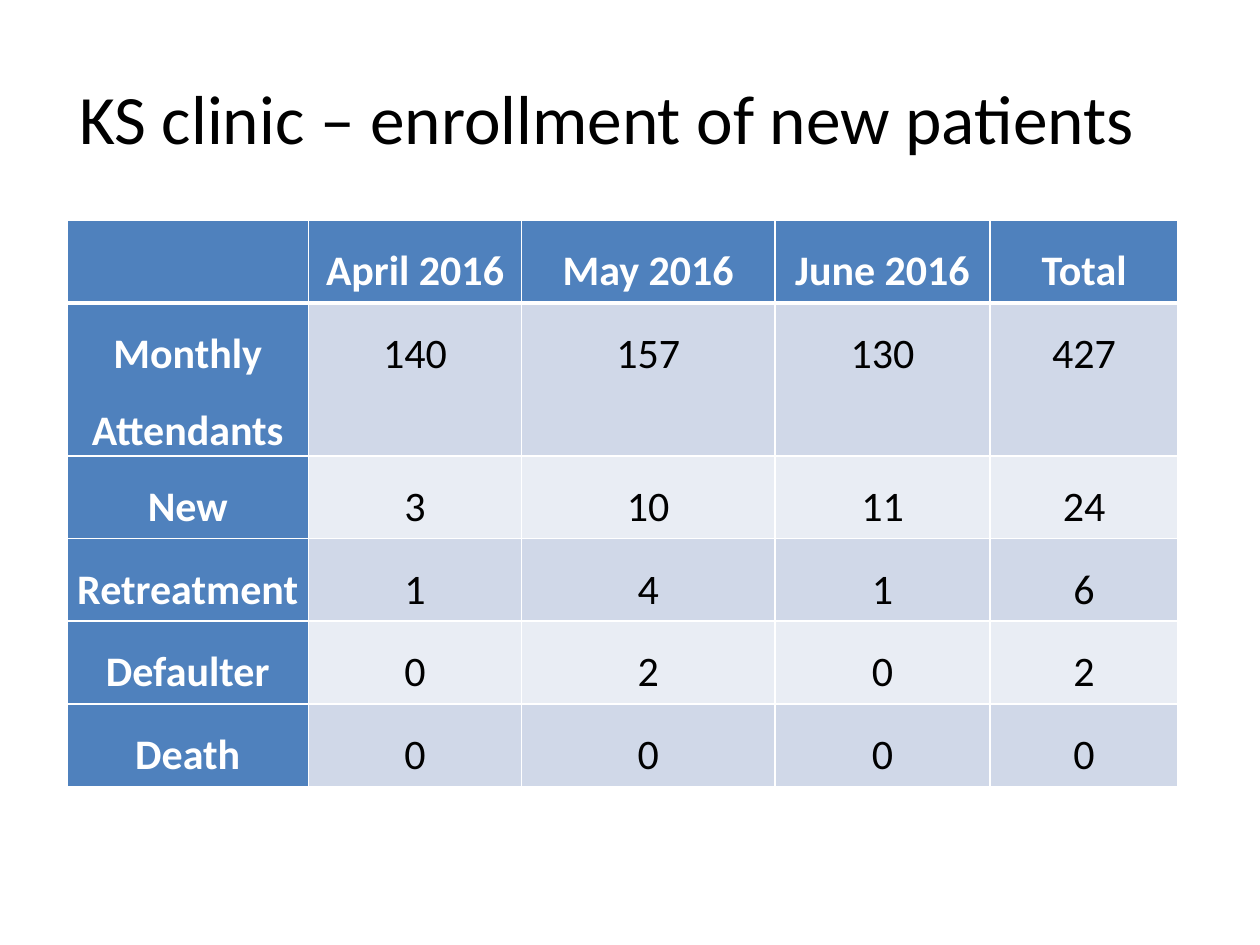
from dataclasses import dataclass

from lxml.etree import SubElement
from pptx import Presentation
from pptx.dml.color import RGBColor
from pptx.enum.text import MSO_ANCHOR, PP_ALIGN
from pptx.oxml.ns import qn
from pptx.util import Pt


@dataclass(frozen=True)
class Theme:
    font: str = "Calibri"
    title_size: float = 39.6
    table_size: float = 24
    text: str = "000000"
    header_text: str = "FFFFFF"
    header_fill: str = "4F81BD"
    bands: tuple = ("D0D8E8", "E9EDF4")
    border: str = "FFFFFF"


theme = Theme()


def style_font(font, size, color, bold=False):
    font.name = theme.font
    font.size = Pt(size)
    font.bold = bold
    font.color.rgb = RGBColor.from_string(color)


def add_borders(cell, bottom_width):
    """Draw all four cell edges; must run before the cell fill is set."""
    properties = cell._tc.get_or_add_tcPr()
    for side, width in (("L", 1), ("R", 1), ("T", 1), ("B", bottom_width)):
        edge = SubElement(properties, qn(f"a:ln{side}"), w=str(Pt(width)))
        fill = SubElement(edge, qn("a:solidFill"))
        SubElement(fill, qn("a:srgbClr"), val=theme.border)


presentation = Presentation()
presentation.slide_width, presentation.slide_height = Pt(720), Pt(540)
slide = presentation.slides.add_slide(presentation.slide_layouts[6])

title = slide.shapes.add_textbox(Pt(38.16), Pt(21.6), Pt(648), Pt(90)).text_frame
title.word_wrap = True
title.vertical_anchor = MSO_ANCHOR.MIDDLE
title.text = "KS clinic – enrollment of new patients"
style_font(title.paragraphs[0].runs[0].font, theme.title_size, theme.text)

enrollment = [
    ("", "April 2016", "May 2016", "June 2016", "Total"),
    ("Monthly Attendants", "140", "157", "130", "427"),
    ("New", "3", "10", "11", "24"),
    ("Retreatment", "1", "4", "1", "6"),
    ("Defaulter", "0", "2", "0", "2"),
    ("Death", "0", "0", "0", "0"),
]
column_widths = [138.24, 121.68, 144.72, 123.12, 107.28]
row_heights = [47.2, 87.4] + [47.2] * 4

table = slide.shapes.add_table(
    len(row_heights), len(column_widths),
    Pt(38.16), Pt(126), Pt(sum(column_widths)), Pt(sum(row_heights)),
).table
table.first_col = True
for column, width in zip(table.columns, column_widths):
    column.width = Pt(width)
for row, height in zip(table.rows, row_heights):
    row.height = Pt(height)

for r, values in enumerate(enrollment):
    for c, value in enumerate(values):
        cell = table.cell(r, c)
        is_header = r == 0 or c == 0
        add_borders(cell, bottom_width=3 if r == 0 else 1)
        cell.fill.solid()
        cell.fill.fore_color.rgb = RGBColor.from_string(
            theme.header_fill if is_header else theme.bands[(r - 1) % 2])
        cell.margin_left = cell.margin_right = Pt(5.4)
        cell.margin_top = cell.margin_bottom = Pt(0)
        cell.text = value
        paragraph = cell.text_frame.paragraphs[0]
        paragraph.alignment = PP_ALIGN.CENTER
        paragraph.line_spacing = 1.5
        for run in paragraph.runs:
            style_font(run.font, theme.table_size,
                       theme.header_text if is_header else theme.text, is_header)

presentation.save("out.pptx")
